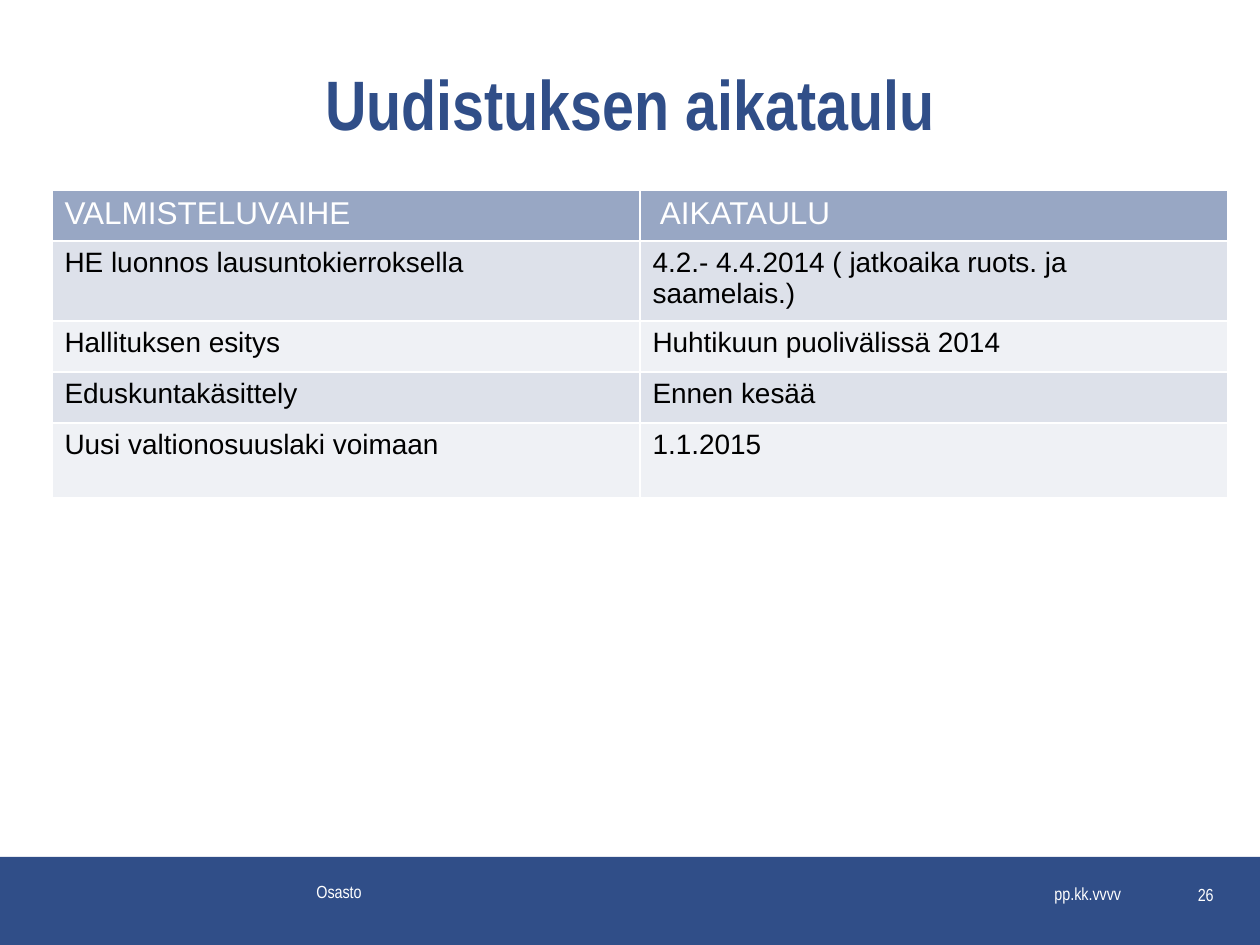
import pptx
import pptx.util
import pptx.dml.color
import pptx.enum.shapes
import pptx.enum.text

COLORS = {"navy": "304E88", "header": "98A7C4", "odd": "DDE1EA",
          "even": "EFF1F5", "white": "FFFFFF", "black": "000000"}
ALIGN = pptx.enum.text.PP_ALIGN
ANCHOR = pptx.enum.text.MSO_ANCHOR


def px(*lengths):
    return [round(length * 914400 / 126) for length in lengths]


def style(paragraph, font_name, size, color, bold=False):
    paragraph.font.name = font_name
    paragraph.font.size = pptx.util.Pt(size)
    paragraph.font.bold = bold
    paragraph.font.color.rgb = pptx.dml.color.RGBColor.from_string(COLORS[color])


deck = pptx.Presentation()
deck.slide_width, deck.slide_height = px(1260, 945)
slide = deck.slides.add_slide(deck.slide_layouts[6])

# Footer band
band = slide.shapes.add_shape(pptx.enum.shapes.MSO_SHAPE.RECTANGLE, *px(0, 857, 1260, 88))
band.shadow.inherit = False
band.fill.solid()
band.fill.fore_color.rgb = pptx.dml.color.RGBColor.from_string(COLORS["navy"])
band.line.fill.background()

# Title and footer texts
labels = [
    ("Uudistuksen aikataulu", (82, 33, 1096, 139), 40, "navy", ALIGN.CENTER, ANCHOR.MIDDLE),
    ("pp.kk.vvvv", (1042, 878, 117, 30), 10, "white", ALIGN.LEFT, ANCHOR.MIDDLE),
    ("26", (1159, 878, 67, 29), 10, "white", ALIGN.RIGHT, ANCHOR.TOP),
    ("Osasto", (304, 867, 399, 50), 10, "white", ALIGN.LEFT, ANCHOR.MIDDLE),
]
for text, place, size, color, align, anchor in labels:
    frame = slide.shapes.add_textbox(*px(*place)).text_frame
    frame.word_wrap = True
    frame.vertical_anchor = anchor
    frame.text = text
    frame.paragraphs[0].alignment = align
    style(frame.paragraphs[0], "Arial Narrow", size, color, bold=size == 40)

# Schedule table; its default style draws the white borders
phases = [
    ("VALMISTELUVAIHE", "AIKATAULU"),
    ("HE luonnos lausuntokierroksella", "4.2.- 4.4.2014 ( jatkoaika ruots. ja saamelais.)"),
    ("Hallituksen esitys", "Huhtikuun puolivälissä 2014"),
    ("Eduskuntakäsittely", "Ennen kesää"),
    ("Uusi valtionosuuslaki voimaan", "1.1.2015"),
]
row_heights = px(51, 75, 51, 51, 75)
schedule = slide.shapes.add_table(len(phases), 2, *px(52, 190, 1176, 303)).table
for row, phase in enumerate(phases):
    schedule.rows[row].height = row_heights[row]
    fill = "header" if row == 0 else "odd" if row % 2 else "even"
    for column, text in enumerate(phase):
        cell = schedule.cell(row, column)
        cell.fill.solid()
        cell.fill.fore_color.rgb = pptx.dml.color.RGBColor.from_string(COLORS[fill])
        cell.text = text
        style(cell.text_frame.paragraphs[0], "Arial",
              18 if row == 0 else 16, "white" if row == 0 else "black")
schedule.cell(0, 1).margin_left = px(20)[0]

deck.save("out.pptx")
